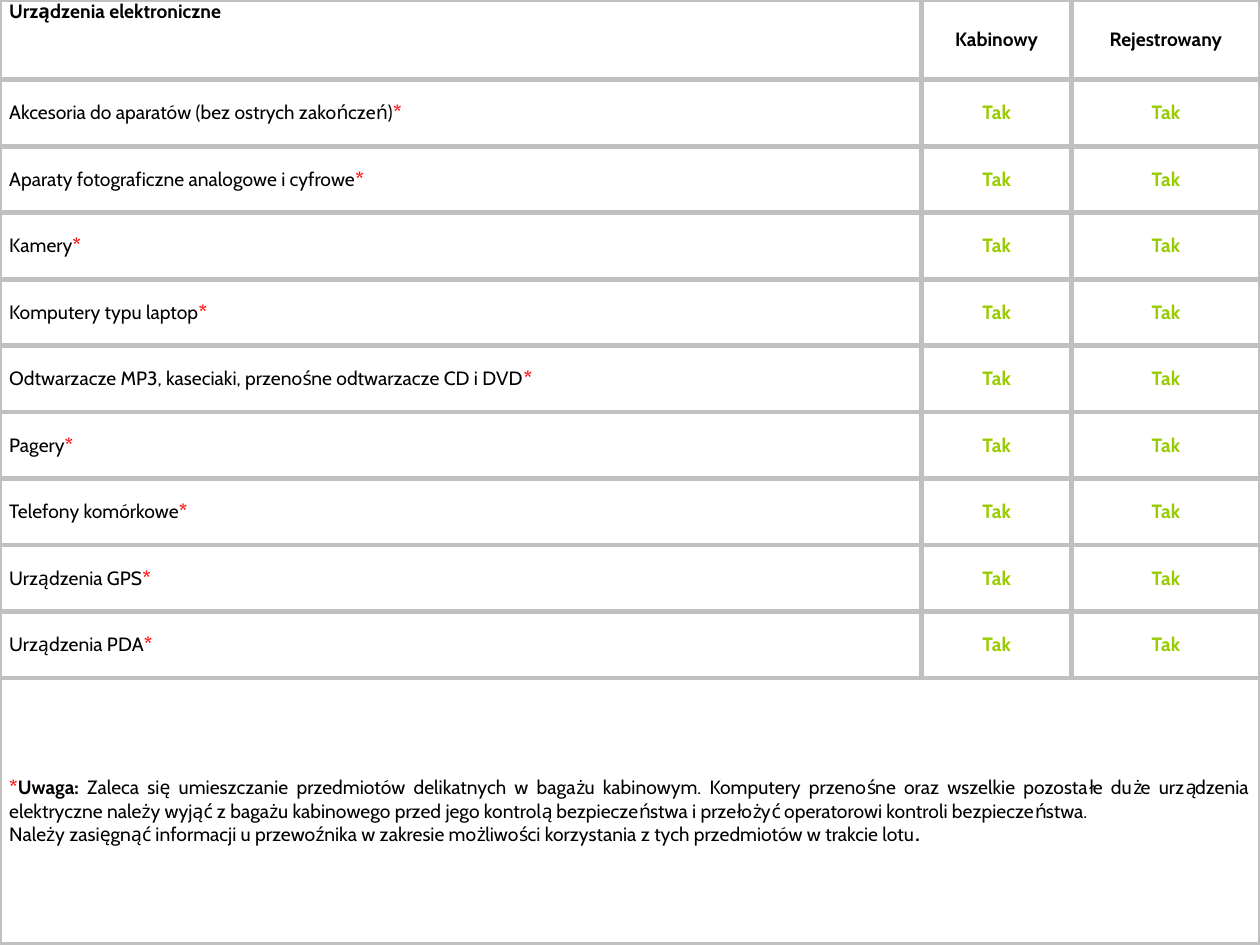
import pptx
import pptx.util
import pptx.dml.color
import pptx.enum.text
import pptx.oxml
import pptx.oxml.ns

Pt = pptx.util.Pt
ALIGN = pptx.enum.text.PP_ALIGN
ANCHOR = pptx.enum.text.MSO_ANCHOR

HEADINGS = ("Urządzenia elektroniczne", "Kabinowy", "Rejestrowany")
DEVICES = [
    "Akcesoria do aparatów (bez ostrych zakończeń)",
    "Aparaty fotograficzne analogowe i cyfrowe",
    "Kamery",
    "Komputery typu laptop",
    "Odtwarzacze MP3, kaseciaki, przenośne odtwarzacze CD i DVD",
    "Pagery",
    "Telefony komórkowe",
    "Urządzenia GPS",
    "Urządzenia PDA",
]
ALLOWED = "Tak"
MARK = "*"
NOTE_LABEL = "Uwaga: "
NOTE = (
    "Zaleca się umieszczanie przedmiotów delikatnych w bagażu kabinowym. "
    "Komputery przenośne oraz wszelkie pozostałe duże urządzenia elektryczne "
    "należy wyjąć z bagażu kabinowego przed jego kontrolą bezpieczeństwa "
    "i przełożyć operatorowi kontroli bezpieczeństwa."
)
ADVICE = (
    "Należy zasięgnąć informacji u przewoźnika w zakresie możliwości "
    "korzystania z tych przedmiotów w trakcie lotu"
)

THEME = {
    "font": "Cabin", "size": 11, "text": "000000", "mark": "FF0000",
    "allowed": "99CC00", "border": "C0C0C0", "border_width": 3,
}
SLIDE_WIDTH, SLIDE_HEIGHT = 720, 540
CABIN_WIDTH, CHECKED_WIDTH = 86, 107.5
HEADING_HEIGHT, DEVICE_HEIGHT = 45.6, 38
SIDE_INSET = 5.3


def add_text(paragraph, text, color=THEME["text"], bold=False, align=ALIGN.JUSTIFY):
    paragraph.alignment = align
    run = paragraph.add_run()
    run.text = text
    run.font.name = THEME["font"]
    run.font.size = Pt(THEME["size"])
    run.font.bold = bold
    run.font.color.rgb = pptx.dml.color.RGBColor.from_string(color)


def format_cell(cell):
    """Set insets, anchor, empty fill and the four borders."""
    cell.margin_left = cell.margin_right = Pt(SIDE_INSET)
    cell.margin_top = cell.margin_bottom = 0
    cell.vertical_anchor = ANCHOR.MIDDLE
    cell.fill.background()
    properties = cell._tc.get_or_add_tcPr()
    for position, side in enumerate("LRTB"):
        border = pptx.oxml.parse_xml(
            f'<a:ln{side} {pptx.oxml.ns.nsdecls("a")} w="{Pt(THEME["border_width"])}">'
            f'<a:solidFill><a:srgbClr val="{THEME["border"]}"/></a:solidFill>'
            f'</a:ln{side}>'
        )
        properties.insert(position, border)


def fill_headings(table):
    for column, heading in enumerate(HEADINGS):
        align = ALIGN.CENTER if column else ALIGN.JUSTIFY
        add_text(table.cell(0, column).text_frame.paragraphs[0], heading,
                 bold=True, align=align)
    table.cell(0, 0).vertical_anchor = ANCHOR.TOP


def fill_devices(table):
    for row, device in enumerate(DEVICES, start=1):
        name = table.cell(row, 0).text_frame.paragraphs[0]
        add_text(name, device)
        add_text(name, MARK, color=THEME["mark"], bold=True)
        for column in range(1, len(HEADINGS)):
            add_text(table.cell(row, column).text_frame.paragraphs[0], ALLOWED,
                     color=THEME["allowed"], bold=True, align=ALIGN.CENTER)


def fill_note(table):
    last_row = len(DEVICES) + 1
    note_cell = table.cell(last_row, 0)
    note_cell.merge(table.cell(last_row, len(HEADINGS) - 1))
    note = note_cell.text_frame.paragraphs[0]
    add_text(note, MARK, color=THEME["mark"], bold=True)
    add_text(note, NOTE_LABEL, bold=True)
    add_text(note, NOTE)
    advice = note_cell.text_frame.add_paragraph()
    add_text(advice, ADVICE)
    add_text(advice, ".", bold=True)


def main():
    presentation = pptx.Presentation()
    presentation.slide_width = Pt(SLIDE_WIDTH)
    presentation.slide_height = Pt(SLIDE_HEIGHT)
    slide = presentation.slides.add_slide(presentation.slide_layouts[6])

    widths = [SLIDE_WIDTH - CABIN_WIDTH - CHECKED_WIDTH, CABIN_WIDTH, CHECKED_WIDTH]
    heights = [HEADING_HEIGHT] + [DEVICE_HEIGHT] * len(DEVICES)
    heights.append(SLIDE_HEIGHT - sum(heights))

    table = slide.shapes.add_table(len(heights), len(widths), 0, 0,
                                   Pt(SLIDE_WIDTH), Pt(SLIDE_HEIGHT)).table
    table.first_row = table.horz_banding = False
    for column, width in zip(table.columns, widths):
        column.width = Pt(width)
    for row, height in zip(table.rows, heights):
        row.height = Pt(height)
    for cell in table.iter_cells():
        format_cell(cell)

    fill_headings(table)
    fill_devices(table)
    fill_note(table)
    presentation.save("out.pptx")


if __name__ == "__main__":
    main()
